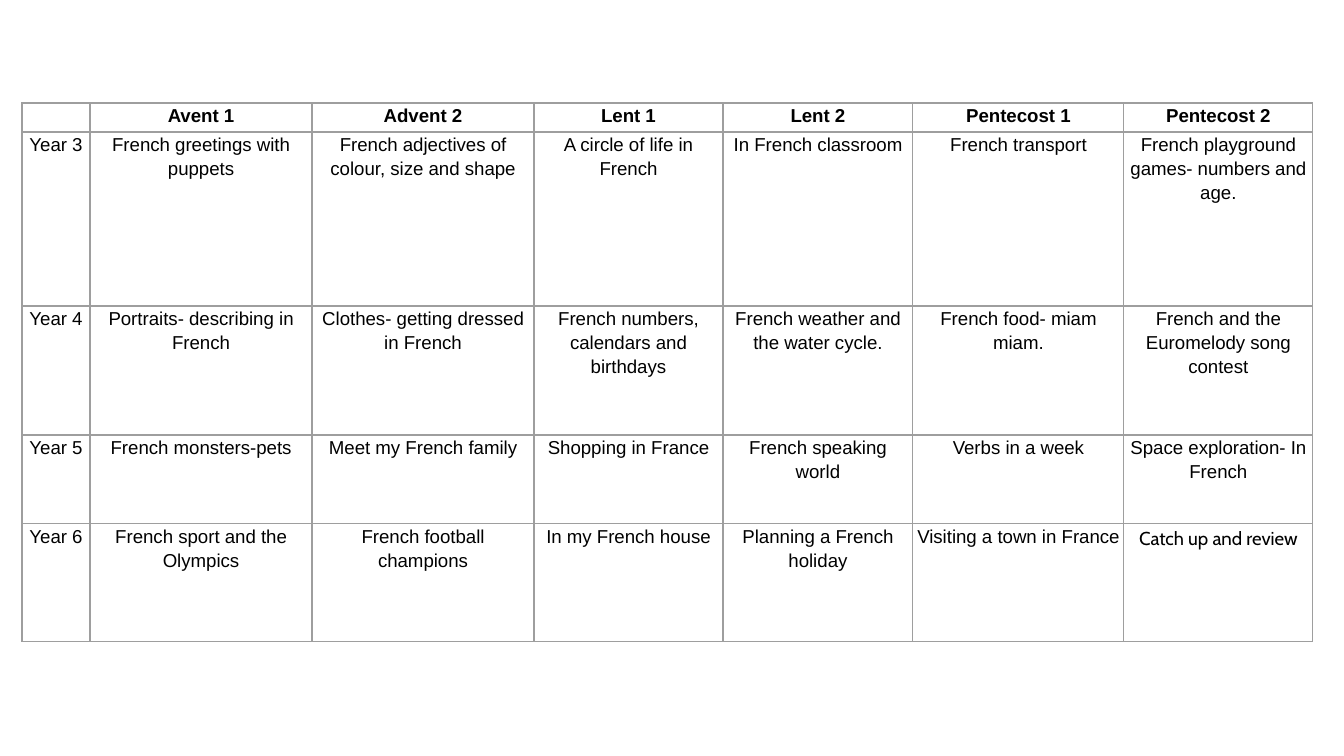
from lxml import etree
from pptx import Presentation, util as u
from pptx.dml.color import RGBColor
from pptx.enum import text
from pptx.oxml.ns import qn

EMU_PER_PX = 9144000 / 1344
COLORS = {"text": "000000", "grid": "9E9E9E"}
COLUMN_WIDTHS = [68, 222, 222, 189, 190, 211, 189]
ROW_HEIGHTS = [29, 174, 129, 89, 118]
CURRICULUM = [
    ["", "Avent 1", "Advent 2", "Lent 1", "Lent 2", "Pentecost 1", "Pentecost 2"],
    ["Year 3", "French greetings with puppets",
     "French adjectives of colour, size and shape", "A circle of life in French",
     "In French classroom", "French transport",
     "French playground games- numbers and age."],
    ["Year 4", "Portraits- describing in French", "Clothes- getting dressed in French",
     "French numbers, calendars and birthdays", "French weather and the water cycle.",
     "French food- miam miam.", "French and the Euromelody song contest"],
    ["Year 5", "French monsters-pets", "Meet my French family", "Shopping in France",
     "French speaking world", "Verbs in a week", "Space exploration- In French"],
    ["Year 6", "French sport and the Olympics", "French football champions",
     "In my French house", "Planning a French holiday", "Visiting a town in France",
     "Catch up and review"],
]
FONTS = {"Catch up and review": "Cabin"}


def px(length):
    """Turn pixels into EMU."""
    return u.Emu(round(length * EMU_PER_PX))


def draw_borders(cell):
    """Give a cell thin grey lines on all four sides."""
    properties = cell._tc.get_or_add_tcPr()
    for side in ("lnL", "lnR", "lnT", "lnB"):
        line = etree.SubElement(properties, qn(f"a:{side}"), w=str(u.Pt(0.75)))
        fill = etree.SubElement(line, qn("a:solidFill"))
        etree.SubElement(fill, qn("a:srgbClr"), val=COLORS["grid"])


def write_topic(cell, topic, bold):
    """Write one centred topic, keeping an empty cell at the same text size."""
    paragraph = cell.text_frame.paragraphs[0]
    paragraph.alignment = text.PP_ALIGN.CENTER
    paragraph.line_spacing = 1.15
    paragraph.space_after = u.Pt(8)
    if not topic:
        etree.SubElement(paragraph._p, qn("a:endParaRPr"), sz="1000")
        return
    run = paragraph.add_run()
    run.text = topic
    run.font.name = FONTS.get(topic, "Arial")
    run.font.size = u.Pt(10)
    run.font.bold = bold
    run.font.color.rgb = RGBColor.from_string(COLORS["text"])


def style_cell(cell):
    """Set the margins, lines and empty fill of a cell."""
    cell.margin_left = cell.margin_right = px(4)
    cell.margin_top = cell.margin_bottom = 0
    draw_borders(cell)
    cell.fill.background()


def add_curriculum(slide):
    """Add the table of French topics by year and term."""
    table = slide.shapes.add_table(
        len(ROW_HEIGHTS), len(COLUMN_WIDTHS), px(22), px(103),
        px(sum(COLUMN_WIDTHS)), px(sum(ROW_HEIGHTS))).table
    table.first_row = table.horz_banding = False
    for column, width in zip(table.columns, COLUMN_WIDTHS):
        column.width = px(width)
    for year, (row, height) in enumerate(zip(table.rows, ROW_HEIGHTS)):
        row.height = px(height)
        for cell, topic in zip(row.cells, CURRICULUM[year]):
            style_cell(cell)
            write_topic(cell, topic, bold=year == 0)


def main():
    """Build and save the curriculum slide."""
    deck = Presentation()
    deck.slide_width, deck.slide_height = px(1344), px(756)
    slide = deck.slides.add_slide(deck.slide_layouts[6])
    add_curriculum(slide)
    deck.save("out.pptx")


if __name__ == "__main__":
    main()
